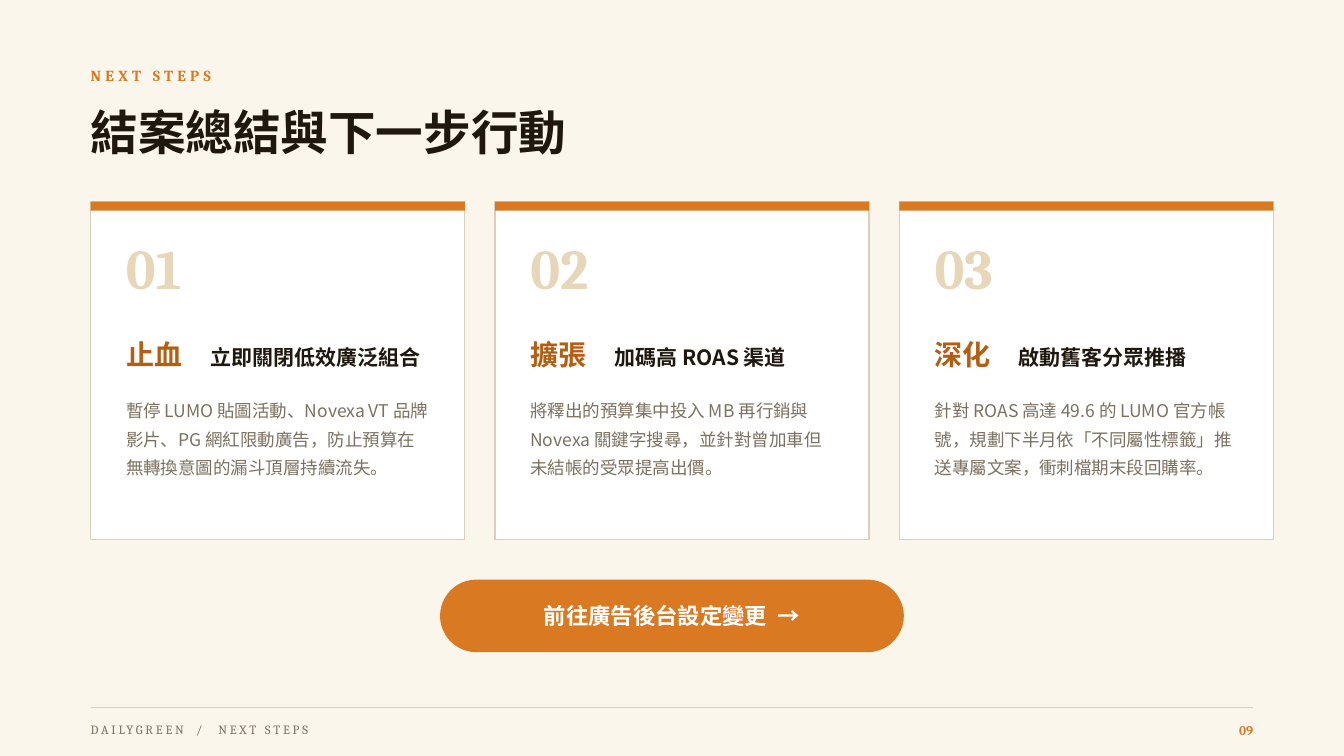
from lxml.etree import SubElement
from pptx import Presentation
from pptx.dml.color import RGBColor
from pptx.enum.shapes import MSO_CONNECTOR as Link, MSO_SHAPE as Shape
from pptx.enum.text import MSO_ANCHOR as Anchor, PP_ALIGN as Align
from pptx.oxml.ns import qn
from pptx.util import Inches, Pt

WIDE, HIGH = 13.33, 7.5
EDGE = 0.9
GAP = 0.3
CARD = 3.71

ORANGE, RUST, INK = "D97A22", "B45E12", "20180E"
GREY, SAND, RULE = "7C7160", "E7D6B8", "D9CFBB"
SERIF, HEAD, BODY = "Cambria", "Noto Sans CJK TC", "Noto Sans CJK SC"

CARDS = [
    ("01", "止血", "立即關閉低效廣泛組合",
     "暫停 LUMO 貼圖活動、Novexa VT 品牌影片、PG 網紅限動廣告，"
     "防止預算在無轉換意圖的漏斗頂層持續流失。"),
    ("02", "擴張", "加碼高 ROAS 渠道",
     "將釋出的預算集中投入 MB 再行銷與 Novexa 關鍵字搜尋，"
     "並針對曾加車但未結帳的受眾提高出價。"),
    ("03", "深化", "啟動舊客分眾推播",
     "針對 ROAS 高達 49.6 的 LUMO 官方帳號，"
     "規劃下半月依「不同屬性標籤」推送專屬文案，衝刺檔期末段回購率。"),
]


def color(code):
    return RGBColor.from_string(code)


def inches(box):
    return [Inches(side) for side in box]


def style(run, size, face, code, bold=False, track=0):
    font = run.font
    font.size, font.name, font.bold = Pt(size), face, bold
    font.color.rgb = color(code)
    props = run._r.get_or_add_rPr()
    SubElement(props, qn("a:ea")).set("typeface", face)
    if track:
        props.set("spc", str(round(track * 100)))


def write(frame, runs, align=Align.LEFT, anchor=Anchor.MIDDLE, lead=None):
    """Fill a frame with runs of (text, size, face, colour, bold, tracking)."""
    frame.word_wrap = True
    frame.vertical_anchor = anchor
    frame.margin_left = frame.margin_right = 0
    frame.margin_top = frame.margin_bottom = 0
    para = frame.paragraphs[0]
    para.alignment = align
    if lead:
        para.line_spacing = lead
    for text, *look in runs:
        run = para.add_run()
        run.text = text
        style(run, *look)


def label(slide, box, runs, **opts):
    write(slide.shapes.add_textbox(*inches(box)).text_frame, runs, **opts)


def block(slide, kind, box, fill, line=None):
    shape = slide.shapes.add_shape(kind, *inches(box))
    shape.shadow.inherit = False
    shape.fill.solid()
    shape.fill.fore_color.rgb = color(fill)
    if line:
        shape.line.color.rgb = color(line)
        shape.line.width = Pt(1)
    else:
        shape.line.fill.background()
    return shape


def header(slide, left, top):
    label(slide, (left, top, 4, 0.3),
          [("NEXT STEPS", 11, SERIF, ORANGE, True, 3)])
    label(slide, (left, top + 0.3, 10, 0.8),
          [("結案總結與下一步行動", 34, HEAD, INK, True)])


def card(slide, box, num, verb, title, text):
    left, top, wide, _ = box
    pad = 0.35
    inner, span = left + pad, wide - 2 * pad
    block(slide, Shape.RECTANGLE, box, "FFFFFF", RULE)
    block(slide, Shape.RECTANGLE, (left, top, wide, 0.09), ORANGE)
    label(slide, (inner, top + 0.3, 2, 0.7), [(num, 40, SERIF, SAND, True)])
    label(slide, (inner, top + 1.15, span, 0.7),
          [(verb + "　", 20, HEAD, RUST, True),
           (title, 15, BODY, INK, True)], lead=1.1)
    label(slide, (inner, top + 1.9, span, 1.3),
          [(text, 12.5, BODY, GREY)], anchor=Anchor.TOP, lead=1.35)


def button(slide, box):
    pill = block(slide, Shape.ROUNDED_RECTANGLE, box, ORANGE)
    pill.adjustments[0] = 0.5
    look = 16, BODY, "FFFFFF", True
    write(pill.text_frame, [("前往廣告後台設定變更", *look),
                            (" ", *look, 3.6), ("→", *look)],
          align=Align.CENTER)


def footer(slide, left, top, wide):
    rule = slide.shapes.add_connector(
        Link.STRAIGHT, *inches((left, top, left + wide, top)))
    rule.line.color.rgb = color(RULE)
    rule.line.width = Pt(1)
    SubElement(rule._element.spPr, qn("a:effectLst"))
    look = 9, SERIF, GREY, False
    label(slide, (left, top + 0.06, 8, 0.32),
          [("DAILYGREEN", *look, 2), (" / ", *look, 4.7),
           ("NEXT STEPS", *look, 2)])
    label(slide, (left + wide - 1.2, top + 0.06, 1.2, 0.32),
          [("09", 9.5, SERIF, ORANGE, True)], align=Align.RIGHT)


def main():
    deck = Presentation()
    deck.slide_width, deck.slide_height = Inches(WIDE), Inches(HIGH)
    slide = deck.slides.add_slide(deck.slide_layouts[6])
    slide.background.fill.solid()
    slide.background.fill.fore_color.rgb = color("FAF6EC")

    # Heading
    header(slide, EDGE, 0.6)

    # Three action cards
    for col, texts in enumerate(CARDS):
        card(slide, (EDGE + col * (CARD + GAP), 2, CARD, 3.35), *texts)

    # Call to action, centred
    button(slide, ((WIDE - 4.6) / 2, 5.75, 4.6, 0.72))

    # Footer
    footer(slide, EDGE, 7.02, WIDE - 2 * EDGE)
    deck.save("out.pptx")


if __name__ == "__main__":
    main()
